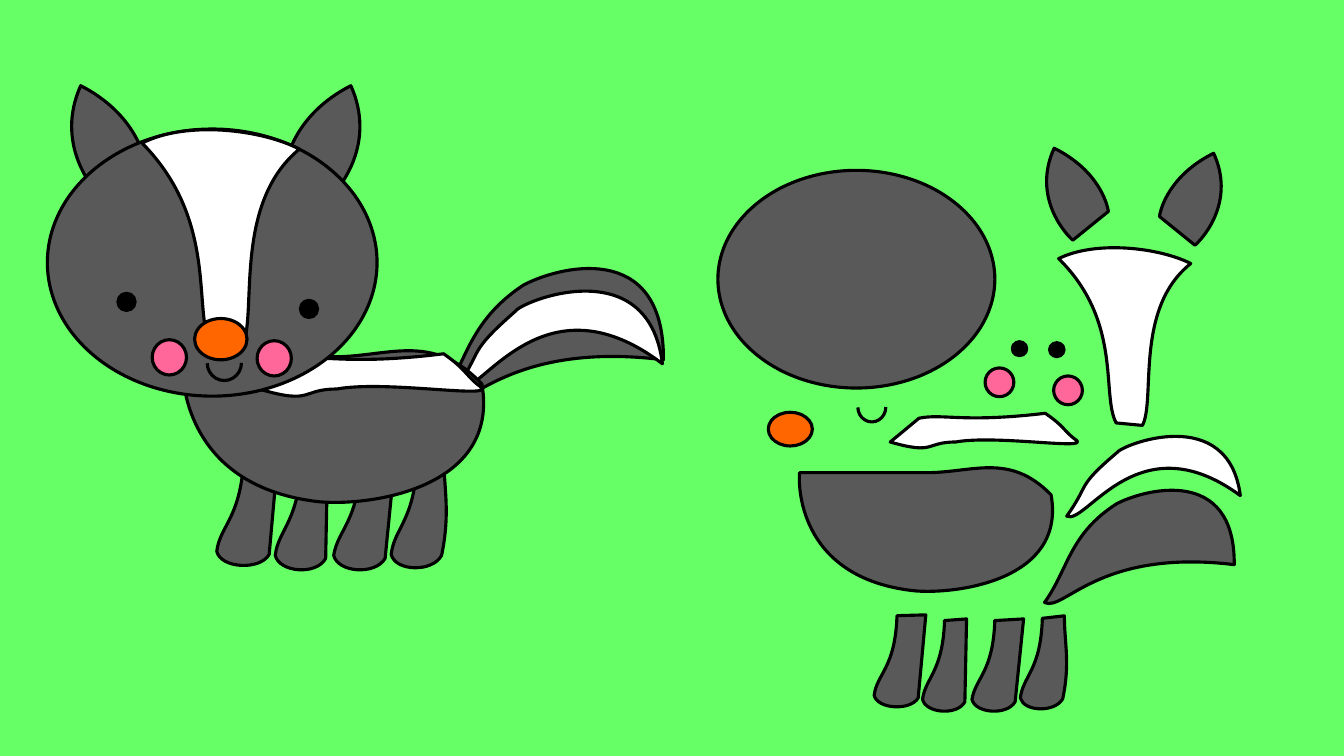
from lxml.etree import SubElement
from pptx import Presentation
from pptx.dml.color import RGBColor
from pptx.enum.shapes import MSO_SHAPE
from pptx.oxml.ns import qn
from pptx.util import Inches, Pt

THEME = {
    "grass": "66FF66", "fur": "595959", "stripe": "FFFFFF", "nose": "FF6600",
    "cheek": "FF6699", "eye": "000000", "outline": "000000", "outline_pt": 2.25,
}
COLS, ROWS = 1333, 750          # fine grid: one cell is a hundredth of an inch
CELL = Inches(0.01)
PIECE_SCALE = (0.84, 0.815)     # loose pieces against the assembled skunk
CURVE_STEPS = 16                # samples used to measure a curve's extent

# An outline is a start point, then lines (x, y) and Bezier curves (six numbers).
LEFT_EAR = [(80, 85), (55, 141, 89, 185, 102, 197), (144, 162),
            (141, 143, 125, 108, 80, 85)]
EAR_MIRROR = 428
RIGHT_EAR = [tuple(EAR_MIRROR - v if i % 2 == 0 else v for i, v in enumerate(step))
             for step in LEFT_EAR]

LEGS = [
    [(242, 450), (240, 514, 218, 521, 215, 547), (219, 564, 258, 566, 267, 550),
     (276, 449), (242, 450)],
    [(299, 455), (297, 518, 276, 525, 273, 551), (277, 568, 314, 571, 323, 554),
     (325, 453), (299, 455)],
    [(358, 455), (356, 518, 335, 525, 331, 551), (335, 568, 372, 571, 382, 554),
     (392, 453), (358, 455)],
    [(414, 453), (412, 517, 391, 523, 388, 550), (392, 567, 429, 568, 438, 551),
     (447, 507, 440, 484, 440, 450), (414, 453)],
]
TAIL = [(658, 357), (659, 236, 552, 265, 519, 283), (463, 320, 462, 363, 434, 403),
        (457, 415, 497, 337, 658, 357)]
TAIL_STRIPE = [(657, 361), (643, 248, 517, 299, 511, 309), (462, 352, 480, 346, 452, 386),
               (475, 398, 536, 269, 657, 361)]
BODY = [(181, 354), (179, 378, 185, 484, 318, 498), (367, 502, 496, 485, 478, 381),
        (428, 328, 384, 355, 328, 354), (181, 354)]
BACK_STRIPE = [(257, 386), (311, 402, 298, 386, 334, 386), (382, 377, 491, 396, 477, 384),
               (462, 373, 463, 367, 440, 351), (342, 363, 320, 351, 291, 357), (257, 386)]
FACE_STRIPE = [(141, 142), (186, 119, 261, 129, 297, 148), (230, 203, 256, 313, 240, 345),
               (209, 342), (191, 308, 217, 219, 141, 142)]

# colour, corner on the skunk, corner as a loose piece, outline or (preset, width, height)
OVAL, ARC = MSO_SHAPE.OVAL, MSO_SHAPE.ARC
PARTS = [
    ("fur", (215, 449), (867, 610), LEGS[0]),
    ("fur", (273, 453), (915, 614), LEGS[1]),
    ("fur", (331, 453), (964, 614), LEGS[2]),
    ("fur", (388, 450), (1012, 611), LEGS[3]),
    ("fur", (434, 266), (1036, 486), TAIL),
    ("stripe", (452, 289), (1058, 433), TAIL_STRIPE),
    ("fur", (181, 348), (793, 464), BODY),
    ("stripe", (257, 351), (883, 410), BACK_STRIPE),
    ("fur", (71, 85), (1038, 147), LEFT_EAR),
    ("fur", (284, 85), (1150, 152), RIGHT_EAR),
    ("fur", (47, 128), (712, 169), (OVAL, 327, 265)),
    ("stripe", (141, 129), (1050, 246), FACE_STRIPE),
    ("nose", (193, 316), (762, 409), (OVAL, 52, 41)),
    ("eye", (117, 291), (1004, 339), (OVAL, 17, 17)),
    ("eye", (298, 298), (1041, 340), (OVAL, 17, 17)),
    (None, (205, 343), (850, 390), (ARC, 35, 34)),
    ("cheek", (151, 337), (977, 365), (OVAL, 34, 35)),
    ("cheek", (255, 338), (1045, 373), (OVAL, 34, 35)),
]


def draw_outline(group, steps):
    """Add a closed freeform whose steps (lists of EMU points) are lines or Bezier curves."""
    traced = [steps[0][0]]
    for step in steps[1:]:
        knots = [traced[-1], *step]
        if len(step) == 1:
            traced += step
            continue
        for n in range(1, CURVE_STEPS + 1):
            t = n / CURVE_STEPS
            weights = ((1 - t) ** 3, 3 * t * (1 - t) ** 2, 3 * t * t * (1 - t), t ** 3)
            traced.append(tuple(round(sum(w * k[axis] for w, k in zip(weights, knots)))
                                for axis in (0, 1)))
    fb = group.shapes.build_freeform(*traced[0])
    fb.add_line_segments(traced[1:], close=True)
    sp = fb.convert_to_shape()

    contour = sp._element.find(".//" + qn("a:path"))
    for segment in list(contour):
        contour.remove(segment)
    for i, step in enumerate(steps):
        tag = "a:moveTo" if i == 0 else "a:lnTo" if len(step) == 1 else "a:cubicBezTo"
        segment = SubElement(contour, qn(tag))
        for x, y in step:
            SubElement(segment, qn("a:pt"), x=str(x - sp.left), y=str(y - sp.top))
    SubElement(contour, qn("a:close"))
    return sp


def paint(sp, colour):
    sp.shadow.inherit = False
    if colour:
        sp.fill.solid()
        sp.fill.fore_color.rgb = RGBColor.from_string(THEME[colour])
    else:
        sp.fill.background()
    sp.line.color.rgb = RGBColor.from_string(THEME["outline"])
    sp.line.width = Pt(THEME["outline_pt"])


prs = Presentation()
prs.slide_width, prs.slide_height = COLS * CELL, ROWS * CELL
s = prs.slides.add_slide(prs.slide_layouts[6])
s.background.fill.solid()
s.background.fill.fore_color.rgb = RGBColor.from_string(THEME["grass"])

for loose, (sx, sy) in ((False, (1, 1)), (True, PIECE_SCALE)):
    group = s.shapes.add_group_shape()
    for colour, corner, piece_corner, form in PARTS:
        left, top = piece_corner if loose else corner
        if isinstance(form, list):
            steps = [[(round((left + (x - corner[0]) * sx) * CELL),
                       round((top + (y - corner[1]) * sy) * CELL))
                      for x, y in zip(step[::2], step[1::2])] for step in form]
            sp = draw_outline(group, steps)
        else:
            preset, width, height = form
            sp = group.shapes.add_shape(preset, left * CELL, top * CELL,
                                        round(width * sx * CELL), round(height * sy * CELL))
            if preset == ARC:       # the smile: a half circle turned to open upwards
                sp.adjustments[0], sp.adjustments[1] = 162, 53.24
                sp.rotation = 90
        paint(sp, colour)

prs.save("out.pptx")
